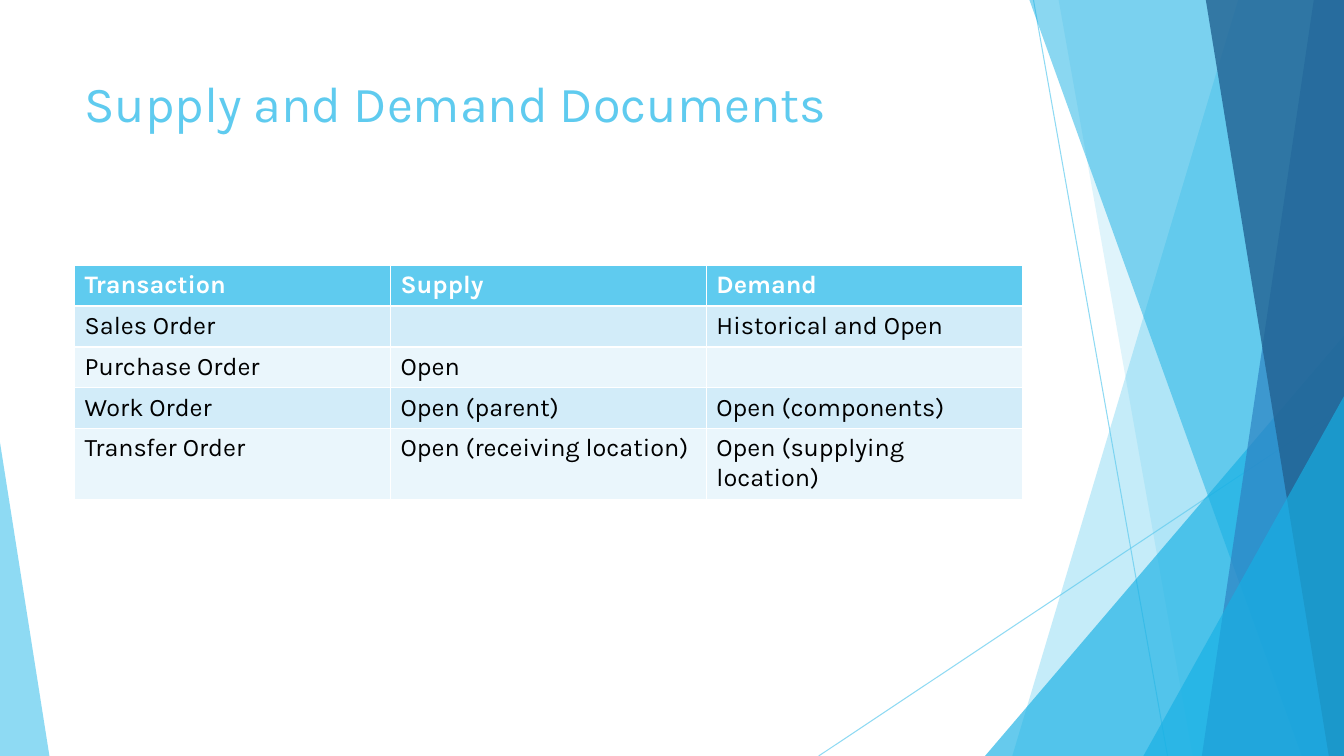
from lxml import etree
from pptx import Presentation
from pptx.dml.color import RGBColor
from pptx.enum import shapes, text
from pptx.oxml import ns
from pptx.util import Inches, Pt

SKY = RGBColor(0x5F, 0xCB, 0xEF)
CYAN = RGBColor(0x17, 0xB0, 0xE4)
BLUE = RGBColor(0x2E, 0x83, 0xC3)
NAVY = RGBColor(0x22, 0x62, 0x92)
WHITE = RGBColor(0xFF, 0xFF, 0xFF)
BLACK = RGBColor(0, 0, 0)
BANDS = RGBColor(0xD2, 0xEC, 0xF9), RGBColor(0xEA, 0xF6, 0xFC)
FONT = "Karla"
WIDE, HIGH = 13.33, 7.5

ROWS = [
    ("Transaction", "Supply", "Demand"),
    ("Sales Order", "", "Historical and Open"),
    ("Purchase Order", "Open", ""),
    ("Work Order", "Open (parent)", "Open (components)"),
    ("Transfer Order", "Open (receiving location)", "Open (supplying location)"),
]


def fade(fill, color, alpha):
    """Set a solid colour that is alpha percent opaque."""
    fill.solid()
    fill.fore_color.rgb = color
    for tone in fill._xPr.iter(ns.qn("a:srgbClr")):
        etree.SubElement(tone, ns.qn("a:alpha"), val=str(alpha * 1000))


def paint(shape, color, alpha):
    shape.shadow.inherit = False
    shape.line.fill.background()
    fade(shape.fill, color, alpha)


def write(frame, words, size=18, color=BLACK, bold=False):
    frame.word_wrap = True
    para = frame.paragraphs[0]
    para.font.size = Pt(size)
    run = para.add_run()
    run.text = words
    font = run.font
    font.name, font.size, font.bold = FONT, Pt(size), bold
    font.color.rgb = color


def ray(slide, start, end):
    line = slide.shapes.add_connector(
        shapes.MSO_CONNECTOR.STRAIGHT, *map(Inches, start + end))
    line.line.width = Pt(0.75)
    fade(line.line.fill, SKY, 70)
    etree.SubElement(line._element.spPr, ns.qn("a:effectLst"))


def shard(slide, top, foot, color, alpha):
    """Fill from a slanted left edge to the right side of the slide."""
    pen = slide.shapes.build_freeform(Inches(top), 0)
    pen.add_line_segments([
        (Inches(x), Inches(y))
        for x, y in ((WIDE, 0), (WIDE, HIGH), (foot, HIGH))])
    paint(pen.convert_to_shape(), color, alpha)


def wedge(slide, left, top, width, peak, color, alpha):
    """Stand a triangle on the bottom edge of the slide."""
    shape = slide.shapes.add_shape(
        shapes.MSO_SHAPE.ISOSCELES_TRIANGLE,
        *map(Inches, (left, top, width, HIGH - top)))
    shape.adjustments[0] = peak
    paint(shape, color, alpha)


def facets(slide):
    ray(slide, (10.25, 0), (11.58, HIGH))
    ray(slide, (WIDE, 4.03), (8.12, HIGH))
    shard(slide, 12.28, 10.04, SKY, 36)
    shard(slide, 10.5, 11.83, SKY, 20)
    wedge(slide, 9.77, 3.33, 3.56, 1, CYAN, 66)
    shard(slide, 10.21, 12.91, CYAN, 50)
    shard(slide, 13.03, 11.92, BLUE, 70)
    shard(slide, 11.96, 13.18, NAVY, 80)
    wedge(slide, 11.34, 3.93, 1.99, 1, CYAN, 66)
    wedge(slide, 0, 4.39, 0.49, 0, SKY, 70)


def title(slide, box):
    frame = slide.shapes.add_textbox(*map(Inches, box)).text_frame
    frame.vertical_anchor = text.MSO_ANCHOR.TOP
    write(frame, "Supply and Demand Documents", size=36, color=SKY)


def grid(slide, box):
    table = slide.shapes.add_table(
        len(ROWS), len(ROWS[0]), *map(Inches, box)).table
    for r, row in enumerate(ROWS):
        head = r == 0
        for c, words in enumerate(row):
            cell = table.cell(r, c)
            cell.fill.solid()
            cell.fill.fore_color.rgb = SKY if head else BANDS[(r - 1) % 2]
            write(cell.text_frame, words,
                  color=WHITE if head else BLACK, bold=head)


def main():
    deck = Presentation()
    deck.slide_width, deck.slide_height = Inches(WIDE), Inches(HIGH)
    slide = deck.slides.add_slide(deck.slide_layouts[6])
    facets(slide)
    title(slide, (0.74, 0.67, 9.4, 1.44))
    grid(slide, (0.74, 2.63, 9.4, 2.03))
    deck.save("out.pptx")


if __name__ == "__main__":
    main()
